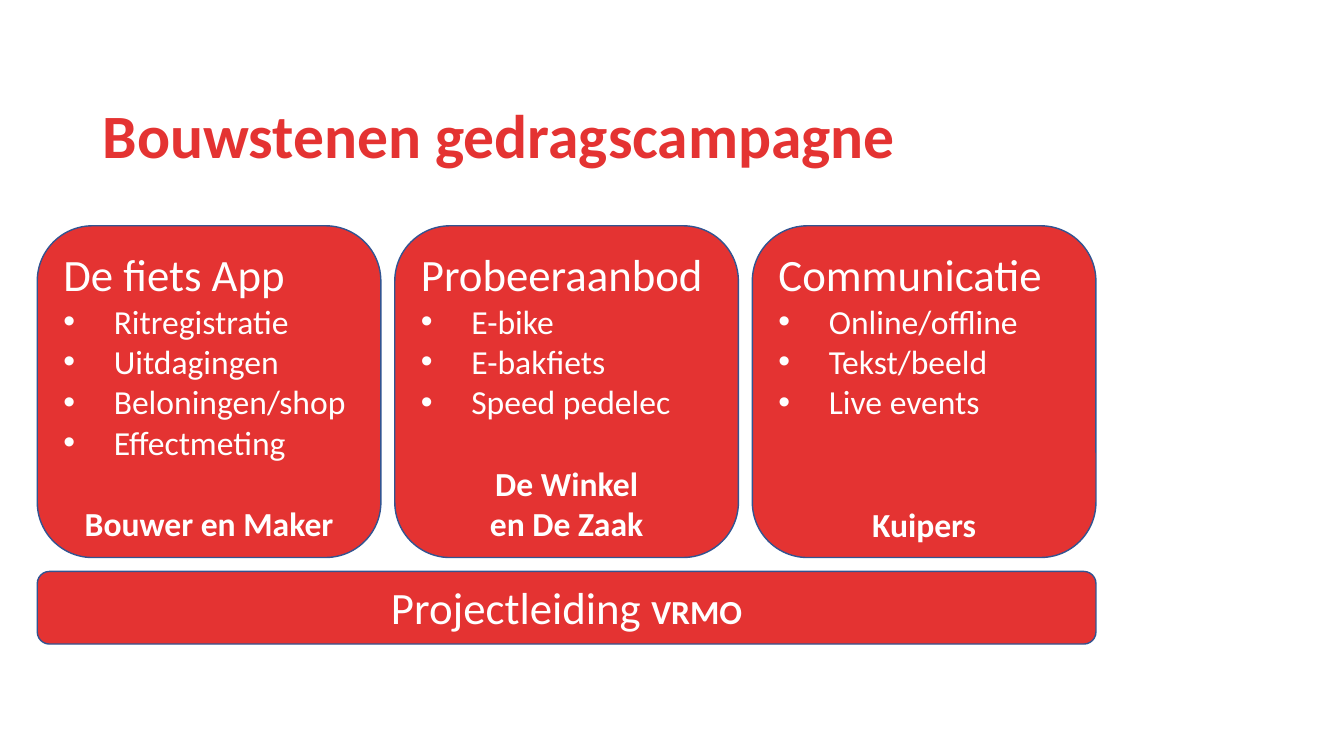
"""Build the slide with the building blocks of a behaviour campaign."""
from lxml.etree import SubElement
from pptx import Presentation
from pptx.dml.color import RGBColor
from pptx.enum.shapes import MSO_SHAPE as Preset
from pptx.enum.text import MSO_ANCHOR as Anchor, PP_ALIGN as Align
from pptx.oxml.ns import qn
from pptx.util import Cm, Pt

TITLE = "Bouwstenen gedragscampagne"
BLOCKS = [
    ("De fiets App",
     ["Ritregistratie", "Uitdagingen", "Beloningen/shop", "Effectmeting"],
     "Bouwer en Maker", 1),
    ("Probeeraanbod",
     ["E-bike", "E-bakfiets", "Speed pedelec"],
     "De Winkel\nen De Zaak".replace("\n", "\v"), 1),
    ("Communicatie",
     ["Online/offline", "Tekst/beeld", "Live events"],
     "Kuipers", 2),
]
MANAGEMENT = [("Projectleiding ", 32, False), ("VRMO", 24, True)]

FONT = "Calibri"
RED, WHITE, OUTLINE = "E43332", "FFFFFF", "325491"
LEFT, BLOCK_TOP, BAR_TOP = 0.94, 5.69, 14.4
BLOCK_WIDTH, BLOCK_HEIGHT, BLOCK_STEP = 8.66, 8.36, 9.01
BAR_HEIGHT = 1.83
BULLET_INDENT = Cm(1.27)
BODY_LINE = 29.3


def color(value):
    return RGBColor.from_string(value)


def format_runs(paragraph, size, bold=False, tint=WHITE):
    for run in paragraph.runs:
        run.font.name = FONT
        run.font.size = Pt(size)
        run.font.bold = bold
        run.font.color.rgb = color(tint)


def add_block(slide, left, top, width, height):
    shape = slide.shapes.add_shape(
        Preset.FLOWCHART_ALTERNATE_PROCESS, Cm(left), Cm(top), Cm(width), Cm(height))
    shape.shadow.inherit = False
    shape.fill.solid()
    shape.fill.fore_color.rgb = color(RED)
    shape.line.color.rgb = color(OUTLINE)
    shape.line.width = Pt(1)
    shape.text_frame.word_wrap = True
    shape.text_frame.vertical_anchor = Anchor.TOP
    shape.text_frame.paragraphs[0].alignment = Align.CENTER
    return shape.text_frame


def add_bullet(paragraph):
    properties = paragraph._p.get_or_add_pPr()
    properties.set("marL", str(BULLET_INDENT))
    properties.set("indent", str(-BULLET_INDENT))
    SubElement(properties, qn("a:buFont")).set("typeface", "Arial")
    SubElement(properties, qn("a:buChar")).set("char", "•")


def fill_block(text_frame, heading, items, partner, free_lines):
    text_frame.text = heading
    format_runs(text_frame.paragraphs[0], 32)
    for item in items:
        paragraph = text_frame.add_paragraph()
        paragraph.text = item
        paragraph.alignment = Align.LEFT
        add_bullet(paragraph)
        format_runs(paragraph, 24)
    paragraph = text_frame.add_paragraph()
    paragraph.text = partner
    paragraph.alignment = Align.CENTER
    paragraph.space_before = Pt(free_lines * BODY_LINE)
    format_runs(paragraph, 24, bold=True)


def add_title(slide):
    text_frame = slide.shapes.add_textbox(
        Cm(2.34), Cm(1.65), Cm(23.57), Cm(3.68)).text_frame
    text_frame.word_wrap = True
    text_frame.vertical_anchor = Anchor.MIDDLE
    text_frame.text = TITLE
    paragraph = text_frame.paragraphs[0]
    paragraph.line_spacing = 0.9
    format_runs(paragraph, 44, bold=True, tint=RED)


def add_management_bar(slide):
    width = BLOCK_STEP * (len(BLOCKS) - 1) + BLOCK_WIDTH
    paragraph = add_block(slide, LEFT, BAR_TOP, width, BAR_HEIGHT).paragraphs[0]
    for text, size, bold in MANAGEMENT:
        run = paragraph.add_run()
        run.text = text
        run.font.name = FONT
        run.font.size = Pt(size)
        run.font.bold = bold
        run.font.color.rgb = color(WHITE)


def main():
    presentation = Presentation()
    presentation.slide_width, presentation.slide_height = Cm(33.87), Cm(19.05)
    slide = presentation.slides.add_slide(presentation.slide_layouts[6])
    add_title(slide)
    for column, block in enumerate(BLOCKS):
        left = LEFT + column * BLOCK_STEP
        fill_block(add_block(slide, left, BLOCK_TOP, BLOCK_WIDTH, BLOCK_HEIGHT), *block)
    add_management_bar(slide)
    presentation.save("out.pptx")


if __name__ == "__main__":
    main()
